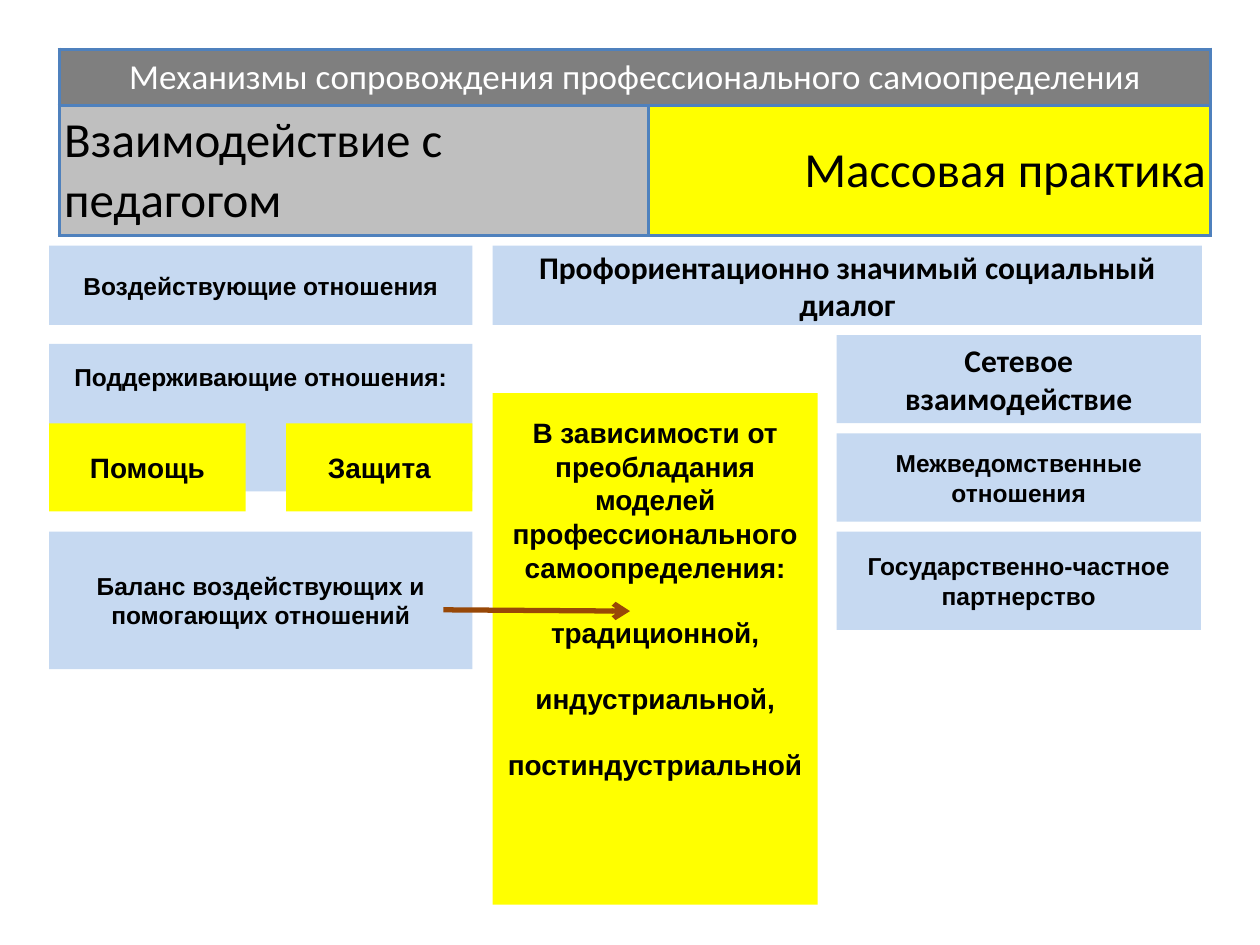
from lxml.etree import SubElement
from pptx import Presentation
from pptx.dml.color import RGBColor as RGB
from pptx.enum.shapes import MSO_CONNECTOR as Line, MSO_SHAPE as Shape
from pptx.enum.text import MSO_ANCHOR as Anchor, PP_ALIGN as Align
from pptx.oxml import parse_xml
from pptx.oxml.ns import nsdecls, qn
from pptx.util import Inches, Pt

COLORS = {
    "black": "000000", "white": "FFFFFF", "dark": "7F7F7F", "gray": "BFBFBF",
    "yellow": "FFFF00", "pale": "C6D9F1", "edge": "4F81BD", "arrow": "984807",
}


def color(name):
    return RGB.from_string(COLORS[name])


def style(par, font, size, ink, bold, align):
    par.alignment = align
    for run in par.runs:
        run.font.name = font
        run.font.size = Pt(size)
        run.font.bold = bold
        run.font.color.rgb = color(ink)


prs = Presentation()
prs.slide_width, prs.slide_height = Inches(10), Inches(7.5)
slide = prs.slides.add_slide(prs.slide_layouts[6])
shapes = slide.shapes

# Heading table
frame = shapes.add_table(2, 2, Inches(0.47), Inches(0.39), Inches(9.14), Inches(1.41))
table = frame.table
table.first_row = table.horz_banding = False
for col, width in zip(table.columns, (4.68, 4.46)):
    col.width = Inches(width)
for row, height in zip(table.rows, (0.45, 0.96)):
    row.height = Inches(height)
table.cell(0, 0).merge(table.cell(0, 1))

cells = [
    (0, 0, "Механизмы сопровождения профессионального самоопределения",
     20, "white", "dark", Align.CENTER),
    (1, 0, "Взаимодействие с педагогом", 28, "black", "gray", Align.LEFT),
    (1, 1, "Массовая практика", 28, "black", "yellow", Align.RIGHT),
]
for row, col, text, size, ink, fill, align in cells:
    cell = table.cell(row, col)
    cell.text_frame.text = text
    cell.vertical_anchor = Anchor.MIDDLE
    cell.margin_left = cell.margin_right = Inches(0.04)
    cell.margin_top = cell.margin_bottom = Inches(0.04)
    style(cell.text_frame.paragraphs[0], "Calibri", size, ink, False, align)
    cell.fill.solid()
    cell.fill.fore_color.rgb = color(fill)

# Cell borders go before the fill
for cell in table.iter_cells():
    props = cell._tc.get_or_add_tcPr()
    for spot, side in enumerate(("lnL", "lnR", "lnT", "lnB")):
        props.insert(spot, parse_xml(
            f'<a:{side} {nsdecls("a")} w="{Pt(2)}"><a:solidFill>'
            f'<a:srgbClr val="{COLORS["edge"]}"/></a:solidFill></a:{side}>'))

# Boxes: left, top, width, height, fill, font, size, top inset, lines
# A top inset pins the text to the top; None centres it
left, mid, right = 0.39, 3.91, 6.64
wide, side = 3.36, 2.89
boxes = [
    (left, 1.95, wide, 0.63, "pale", "Arial", 14, None, ["Воздействующие отношения"]),
    (mid, 1.95, 5.63, 0.63, "pale", "Calibri", 18, None,
     ["Профориентационно значимый социальный диалог"]),
    (left, 4.22, wide, 1.09, "pale", "Arial", 14, None,
     ["Баланс воздействующих и помогающих отношений"]),
    (left, 2.73, wide, 1.17, "pale", "Arial", 14, 0.14, ["Поддерживающие отношения:"]),
    (mid, 3.12, 2.58, 4.06, "yellow", "Arial", 16, 0.18,
     ["В зависимости от преобладания моделей", "профессионального",
      "самоопределения:", "традиционной,", "индустриальной,", "постиндустриальной"]),
    (right, 2.66, side, 0.7, "pale", "Calibri", 18, None, ["Сетевое взаимодействие"]),
    (right, 3.44, side, 0.7, "pale", "Arial", 14, None, ["Межведомственные отношения"]),
    (right, 4.22, side, 0.78, "pale", "Arial", 14, None,
     ["Государственно-частное партнерство"]),
    (left, 3.36, 1.56, 0.7, "yellow", "Arial", 16, None, ["Помощь"]),
    (2.27, 3.36, 1.48, 0.7, "yellow", "Arial", 16, None, ["Защита"]),
]
for x, y, w, h, fill, font, size, inset, lines in boxes:
    box = shapes.add_shape(Shape.RECTANGLE, Inches(x), Inches(y), Inches(w), Inches(h))
    box.shadow.inherit = False
    box.fill.solid()
    box.fill.fore_color.rgb = color(fill)
    box.line.fill.background()
    body = box.text_frame
    body.word_wrap = True
    body.vertical_anchor = Anchor.MIDDLE
    if inset is not None:
        body.vertical_anchor = Anchor.TOP
        body.margin_top = Inches(inset)
    body.text = "\n".join(lines)
    for spot, par in enumerate(body.paragraphs):
        style(par, font, size, "black", True, Align.CENTER)
        if spot > 2:  # the list of models is set apart by one line
            par.space_before = Pt(18.4)

# Arrow from the balance box to the models
arrow = shapes.add_connector(Line.STRAIGHT, Inches(3.52), Inches(4.84),
                             Inches(5), Inches(4.85))
arrow.line.color.rgb = color("arrow")
arrow.line.width = Pt(3)
SubElement(arrow.line._get_or_add_ln(), qn("a:tailEnd"), type="arrow")
SubElement(arrow._element.spPr, qn("a:effectLst"))

prs.save("out.pptx")
